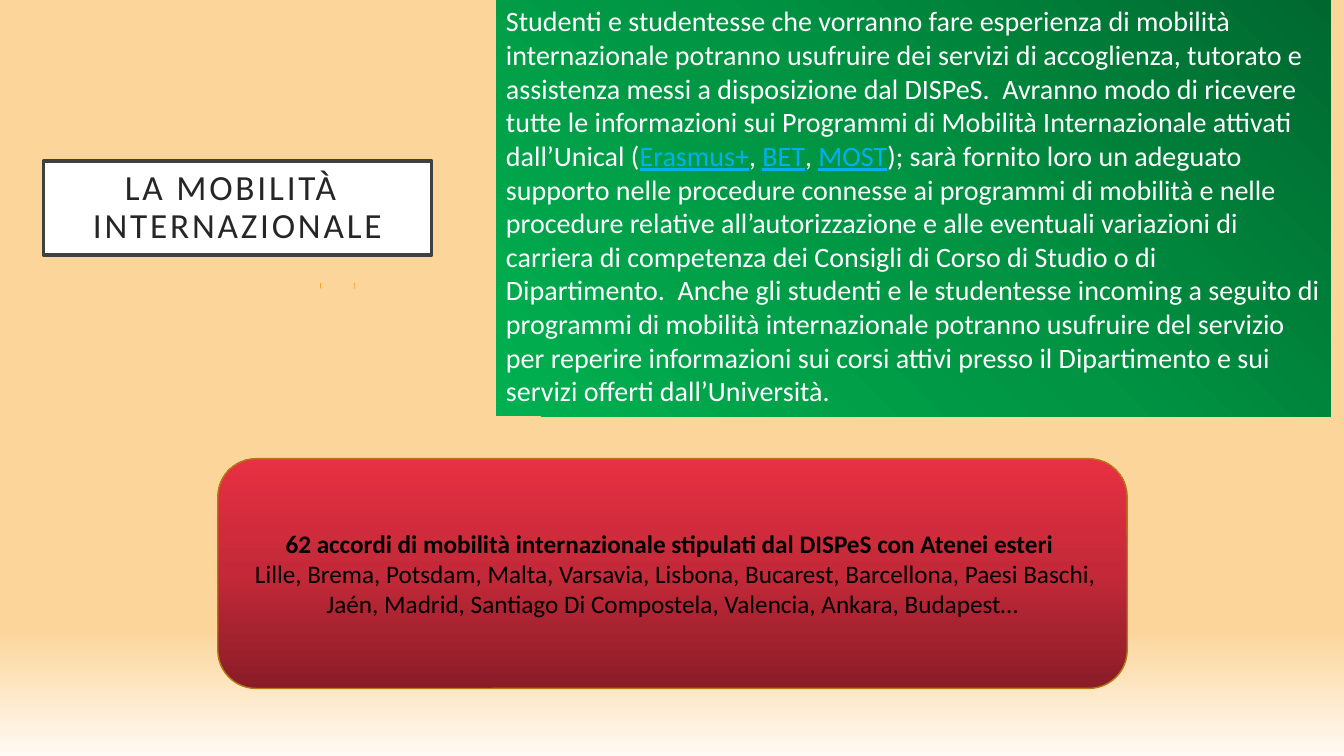
from lxml.etree import SubElement
from pptx import Presentation
from pptx.dml.color import RGBColor
from pptx.enum.shapes import MSO_SHAPE as Shape
from pptx.enum.text import MSO_ANCHOR as Anchor, PP_ALIGN as Align
from pptx.oxml.ns import qn
from pptx.util import Inches, Pt

COLORS = {
    "white": "FFFFFF", "black": "000000", "title": "262626", "frame": "404040",
    "link": "00B0F0", "orange": "F6A21D", "brown": "B67815",
    "sand": "FBD599", "cream": "FFFAF4",
    "green_dark": "00682F", "green_mid": "009443", "green": "00B050",
    "red_dark": "891C27", "red_mid": "C32938", "red": "E73042",
}

MOBILITY_START = (
    "Studenti e studentesse che vorranno fare esperienza di mobilità internazionale "
    "potranno usufruire dei servizi di accoglienza, tutorato e assistenza messi a "
    "disposizione dal DISPeS.  Avranno modo di ricevere tutte le informazioni sui "
    "Programmi di Mobilità Internazionale attivati dall’Unical ("
)
MOBILITY_END = (
    "); sarà fornito loro un adeguato supporto nelle procedure connesse ai programmi di "
    "mobilità e nelle procedure relative all’autorizzazione e alle eventuali variazioni di "
    "carriera di competenza dei Consigli di Corso di Studio o di Dipartimento.  Anche gli "
    "studenti e le studentesse incoming a seguito di programmi di mobilità internazionale "
    "potranno usufruire del servizio per reperire informazioni sui corsi attivi presso il "
    "Dipartimento e sui servizi offerti dall’Università."
)
CITIES = (
    " Lille, Brema, Potsdam, Malta, Varsavia, Lisbona, Bucarest, Barcellona, Paesi Baschi, "
    "Jaén, Madrid, Santiago Di Compostela, Valencia, Ankara, Budapest…"
)


def rgb(name):
    return RGBColor.from_string(COLORS[name])


def set_gradient(fill, owner, stops, angle=None, focus=None):
    """Fill with (percent, color) stops, linear by angle or circular around a focus."""
    fill.gradient()
    gradient = next(owner.iter(qn("a:gradFill")))
    for child in list(gradient):
        gradient.remove(child)
    stop_list = SubElement(gradient, qn("a:gsLst"))
    for percent, color in stops:
        stop = SubElement(stop_list, qn("a:gs"), pos=str(percent * 1000))
        SubElement(stop, qn("a:srgbClr"), val=COLORS[color])
    if focus:
        circle = SubElement(gradient, qn("a:path"), path="circle")
        SubElement(circle, qn("a:fillToRect"), **focus)
    else:
        SubElement(gradient, qn("a:lin"), ang=str(angle * 60000), scaled="0")


def add_text(para, text, size=18, color="black", bold=False, underline=False, spacing=0):
    span = para.add_run()
    span.text = text
    font = span.font
    font.name, font.size = "Calibri", Pt(size)
    font.bold, font.underline = bold, underline
    font.color.rgb = rgb(color)
    if spacing:
        span._r.get_or_add_rPr().set("spc", str(spacing * 100))


class SlideBuilder:
    """Holds the shared style and the current slide."""

    def __init__(self, page):
        self.page = page

    def background(self, stops, angle):
        set_gradient(self.page.background.fill, self.page._element, stops, angle)

    def shape(self, kind, left, top, width, height, fill=None, gradient=None,
              line=None, line_width=1):
        box = self.page.shapes.add_shape(
            kind, Inches(left), Inches(top), Inches(width), Inches(height))
        box.shadow.inherit = False
        if gradient:
            set_gradient(box.fill, box._element, **gradient)
        elif fill:
            box.fill.solid()
            box.fill.fore_color.rgb = rgb(fill)
        else:
            box.fill.background()
        if line:
            box.line.color.rgb = rgb(line)
            box.line.width = Pt(line_width)
        else:
            box.line.fill.background()
        return box

    def paragraphs(self, box, count=1, align=Align.CENTER, anchor=Anchor.MIDDLE):
        """Prepare the text frame and return its paragraphs."""
        frame = box.text_frame
        frame.word_wrap = True
        frame.vertical_anchor = anchor
        for _ in range(count - 1):
            frame.add_paragraph()
        for para in frame.paragraphs:
            para.alignment = align
        return frame.paragraphs

    def title(self, lines):
        box = self.shape(Shape.RECTANGLE, 0.43, 1.6, 3.85, 0.93,
                         fill="white", line="frame", line_width=2.5)
        frame = box.text_frame
        frame.margin_left = frame.margin_right = Inches(0.2)
        frame.margin_top = frame.margin_bottom = Inches(0.2)
        para = self.paragraphs(box)[0]
        para.line_spacing = 0.9
        for index, text in enumerate(lines):
            if index:
                para.add_line_break()
            add_text(para, text, size=25.2, color="title", spacing=2)

    def mobility_panel(self, start, programmes, end):
        box = self.shape(Shape.RECTANGLE, 4.92, -0.01, 8.28, 4.14, gradient={
            "stops": [(0, "green_dark"), (50, "green_mid"), (100, "green")],
            "focus": {"l": "100000", "b": "100000"}})
        para = self.paragraphs(box, align=Align.LEFT, anchor=Anchor.TOP)[0]
        add_text(para, start, size=20, color="white")
        for index, programme in enumerate(programmes):
            if index:
                add_text(para, ", ", size=20, color="white")
            add_text(para, programme, size=20, color="link", underline=True)
        add_text(para, end, size=20, color="white")

    def agreements_card(self, heading, cities):
        box = self.shape(
            Shape.ROUNDED_RECTANGLE, 2.16, 4.55, 9.02, 2.28, line="brown",
            gradient={"stops": [(0, "red_dark"), (50, "red_mid"), (100, "red")],
                      "angle": 270})
        first, second = self.paragraphs(box, count=2)
        add_text(first, heading, bold=True)
        add_text(second, cities)


def main():
    deck = Presentation()
    deck.slide_width, deck.slide_height = Inches(13.33), Inches(7.5)
    builder = SlideBuilder(deck.slides.add_slide(deck.slide_layouts[6]))
    builder.background([(0, "sand"), (83, "sand"), (100, "cream")], angle=90)
    builder.title(["LA MOBILITÀ ", "INTERNAZIONALE"])
    builder.shape(Shape.DOUBLE_BRACKET, 3.18, 2.81, 0.34, 0.05,
                  line="orange", line_width=0.5)
    builder.mobility_panel(MOBILITY_START, ["Erasmus+", "BET", "MOST"], MOBILITY_END)
    builder.agreements_card(
        "62 accordi di mobilità internazionale stipulati dal DISPeS con Atenei esteri ",
        CITIES)
    deck.save("out.pptx")


if __name__ == "__main__":
    main()
